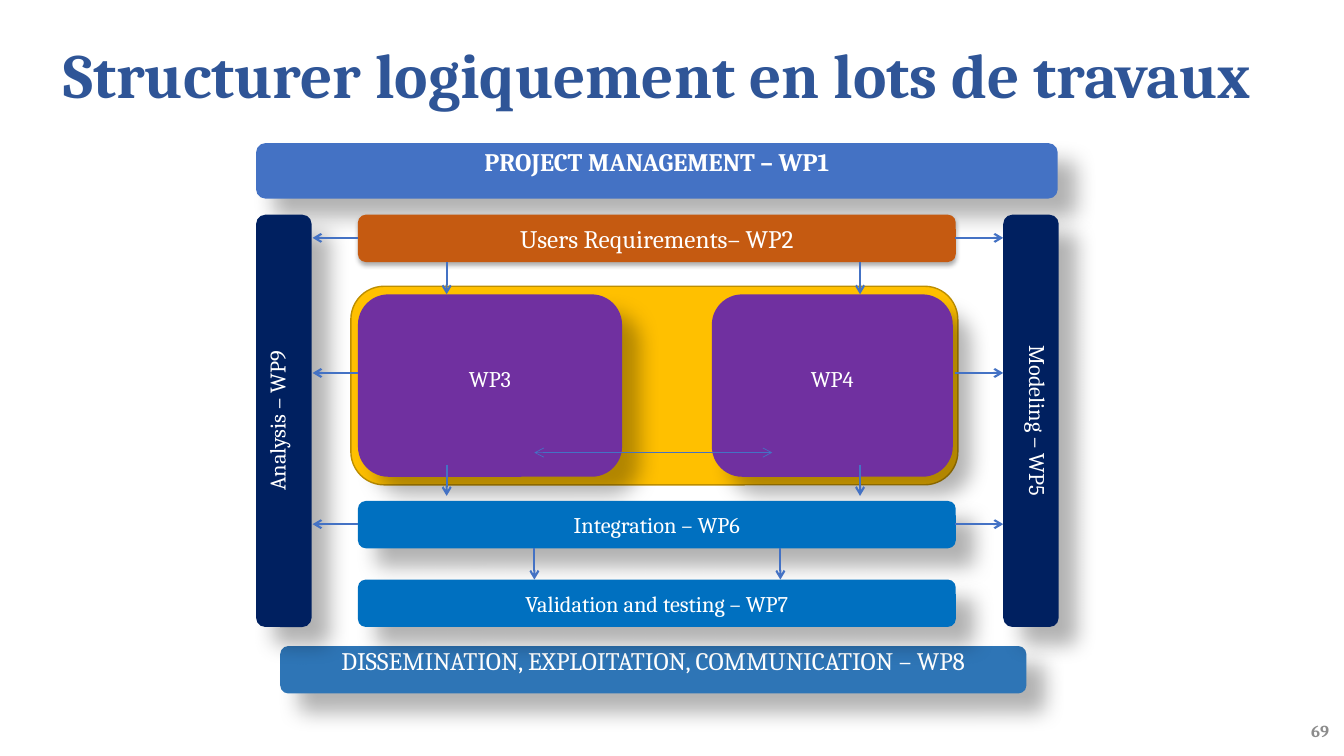
"""Build a slide that shows how a project is split into work packages."""
import dataclasses
import typing

import lxml.etree
import pptx
import pptx.dml.color
import pptx.enum.shapes
import pptx.enum.text
import pptx.oxml.ns
import pptx.slide
import pptx.util

Inches = pptx.util.Inches
Pt = pptx.util.Pt
Align = pptx.enum.text.PP_ALIGN


class Shadow(typing.NamedTuple):
    opacity: int
    blur: float
    distance: float
    angle: int


@dataclasses.dataclass(frozen=True)
class Theme:
    font: str = "Cambria"
    title: str = "2F5597"
    page: str = "8C8C8C"
    text: str = "FFFFFF"
    management: str = "4472C4"
    requirements: str = "C55A11"
    core: str = "FFC000"
    core_edge: str = "BD8E00"
    development: str = "7030A0"
    delivery: str = "0070C0"
    support: str = "002060"
    outreach: str = "2E75B6"
    arrow: str = "4472C4"
    title_size: float = 45
    page_size: float = 12
    large: float = 18
    normal: float = 16
    deep: Shadow = Shadow(30, 15, 18, 45)
    soft: Shadow = Shadow(32, 3.5, 2.2, 90)


THEME = Theme()


@dataclasses.dataclass(frozen=True)
class Package:
    label: str
    left: float
    top: float
    width: float
    height: float
    fill: str
    size: float = THEME.normal
    leading: float | None = None
    bold: bool = False
    rotation: int = 0
    shadow: Shadow | None = THEME.deep
    edge: str | None = None


class Arrow(typing.NamedTuple):
    x1: float
    y1: float
    x2: float
    y2: float
    weight: float = 1.5
    both: bool = False


ROW_LEFT, ROW_WIDTH, ROW_HEIGHT = 3.55, 5.93, 0.47
ROW_RIGHT = 9.47
SIDE_LENGTH, SIDE_WIDTH, SIDE_TOP = 4.09, 0.55, 3.9

PACKAGES = [
    Package("", 3.48, 2.84, 6.02, 1.97, THEME.core, shadow=None, edge=THEME.core_edge),
    Package("PROJECT MANAGEMENT – WP1", 2.54, 1.42, 7.95, 0.55, THEME.management,
            THEME.large, leading=8, bold=True),
    Package("Users Requirements– WP2", ROW_LEFT, 2.13, ROW_WIDTH, ROW_HEIGHT,
            THEME.requirements, THEME.large, shadow=THEME.soft),
    Package("DISSEMINATION, EXPLOITATION, COMMUNICATION – WP8", 2.78, 6.41, 7.4,
            ROW_HEIGHT, THEME.outreach, THEME.large, leading=8),
    Package("WP3", ROW_LEFT, 2.92, 2.62, 1.81, THEME.development, leading=9),
    Package("Modeling – WP5", 8.18, SIDE_TOP, SIDE_LENGTH, SIDE_WIDTH, THEME.support,
            leading=9, rotation=90),
    Package("WP4", 7.06, 2.92, 2.39, 1.81, THEME.development, leading=9),
    Package("Integration – WP6", ROW_LEFT, 4.97, ROW_WIDTH, ROW_HEIGHT, THEME.delivery),
    Package("Analysis – WP9", 0.77, SIDE_TOP, SIDE_LENGTH, SIDE_WIDTH, THEME.support,
            leading=9, rotation=270),
    Package("Validation and testing – WP7", ROW_LEFT, 5.75, ROW_WIDTH, ROW_HEIGHT,
            THEME.delivery),
]

DOWNWARD = [Arrow(x, top, x, bottom)
            for top, bottom, columns in ((2.6, 2.92, (4.43, 8.53)),
                                         (4.61, 4.92, (4.43, 8.53)),
                                         (5.44, 5.75, (5.3, 7.74)))
            for x in columns]
SIDEWAYS = [Arrow(start, y, end, y)
            for y in (2.36, 3.7, 5.2)
            for start, end in ((ROW_LEFT, 3.1), (ROW_RIGHT, 9.95))]
EXCHANGE = Arrow(5.3, 4.49, 7.66, 4.49, weight=0.5, both=True)


def rgb(value: str) -> pptx.dml.color.RGBColor:
    return pptx.dml.color.RGBColor.from_string(value)


def add_child(parent: typing.Any, tag: str, **attributes: typing.Any) -> typing.Any:
    values = {key: str(value) for key, value in attributes.items()}
    return lxml.etree.SubElement(parent, pptx.oxml.ns.qn(tag), values)


def write_text(frame: typing.Any, text: str, *, size: float, color: str,
               bold: bool = False, align: Align = Align.CENTER,
               leading: typing.Any = None) -> None:
    frame.word_wrap = True
    frame.vertical_anchor = pptx.enum.text.MSO_ANCHOR.MIDDLE
    paragraph = frame.paragraphs[0]
    paragraph.alignment = align
    paragraph.line_spacing = leading
    run = paragraph.add_run()
    run.text = text
    run.font.name = THEME.font
    run.font.size = Pt(size)
    run.font.bold = bold
    run.font.color.rgb = rgb(color)


def cast_shadow(properties: typing.Any, shadow: Shadow) -> None:
    effects = properties.find(pptx.oxml.ns.qn("a:effectLst"))
    outer = add_child(effects, "a:outerShdw", blurRad=Pt(shadow.blur),
                      dist=Pt(shadow.distance), dir=shadow.angle * 60000,
                      algn="tl", rotWithShape=0)
    tint = add_child(outer, "a:srgbClr", val="000000")
    add_child(tint, "a:alpha", val=shadow.opacity * 1000)


def draw_package(slide: pptx.slide.Slide, package: Package) -> None:
    block = slide.shapes.add_shape(
        pptx.enum.shapes.MSO_SHAPE.ROUNDED_RECTANGLE,
        Inches(package.left), Inches(package.top),
        Inches(package.width), Inches(package.height))
    block.rotation = package.rotation
    block.fill.solid()
    block.fill.fore_color.rgb = rgb(package.fill)
    if package.edge:
        block.line.color.rgb = rgb(package.edge)
        block.line.width = Pt(1)
    else:
        block.line.fill.background()
    block.shadow.inherit = False
    if package.shadow:
        cast_shadow(block._element.spPr, package.shadow)
    if package.label:
        write_text(block.text_frame, package.label, size=package.size,
                   color=THEME.text, bold=package.bold,
                   leading=Pt(package.leading) if package.leading else None)


def draw_arrow(slide: pptx.slide.Slide, arrow: Arrow) -> None:
    link = slide.shapes.add_connector(
        pptx.enum.shapes.MSO_CONNECTOR.STRAIGHT,
        Inches(arrow.x1), Inches(arrow.y1), Inches(arrow.x2), Inches(arrow.y2))
    link.line.color.rgb = rgb(THEME.arrow)
    link.line.width = Pt(arrow.weight)
    properties = link._element.spPr
    outline = properties.find(pptx.oxml.ns.qn("a:ln"))
    if arrow.both:
        add_child(outline, "a:headEnd", type="arrow")
    add_child(outline, "a:tailEnd", type="arrow")
    add_child(properties, "a:effectLst")


def main() -> None:
    deck = pptx.Presentation()
    deck.slide_width, deck.slide_height = Inches(13.33), Inches(7.5)
    slide = deck.slides.add_slide(deck.slide_layouts[6])

    heading = slide.shapes.add_textbox(Inches(0.53), Inches(0.4), Inches(12.26), Inches(0.75))
    write_text(heading.text_frame, "Structurer logiquement en lots de travaux",
               size=THEME.title_size, color=THEME.title, bold=True,
               align=Align.LEFT, leading=0.9)
    page = slide.shapes.add_textbox(Inches(10.28), Inches(7.05), Inches(3), Inches(0.4))
    write_text(page.text_frame, "69", size=THEME.page_size, color=THEME.page,
               bold=True, align=Align.RIGHT)

    for package in PACKAGES:
        draw_package(slide, package)
    for arrow in [*DOWNWARD, *SIDEWAYS, EXCHANGE]:
        draw_arrow(slide, arrow)
    deck.save("out.pptx")


if __name__ == "__main__":
    main()
